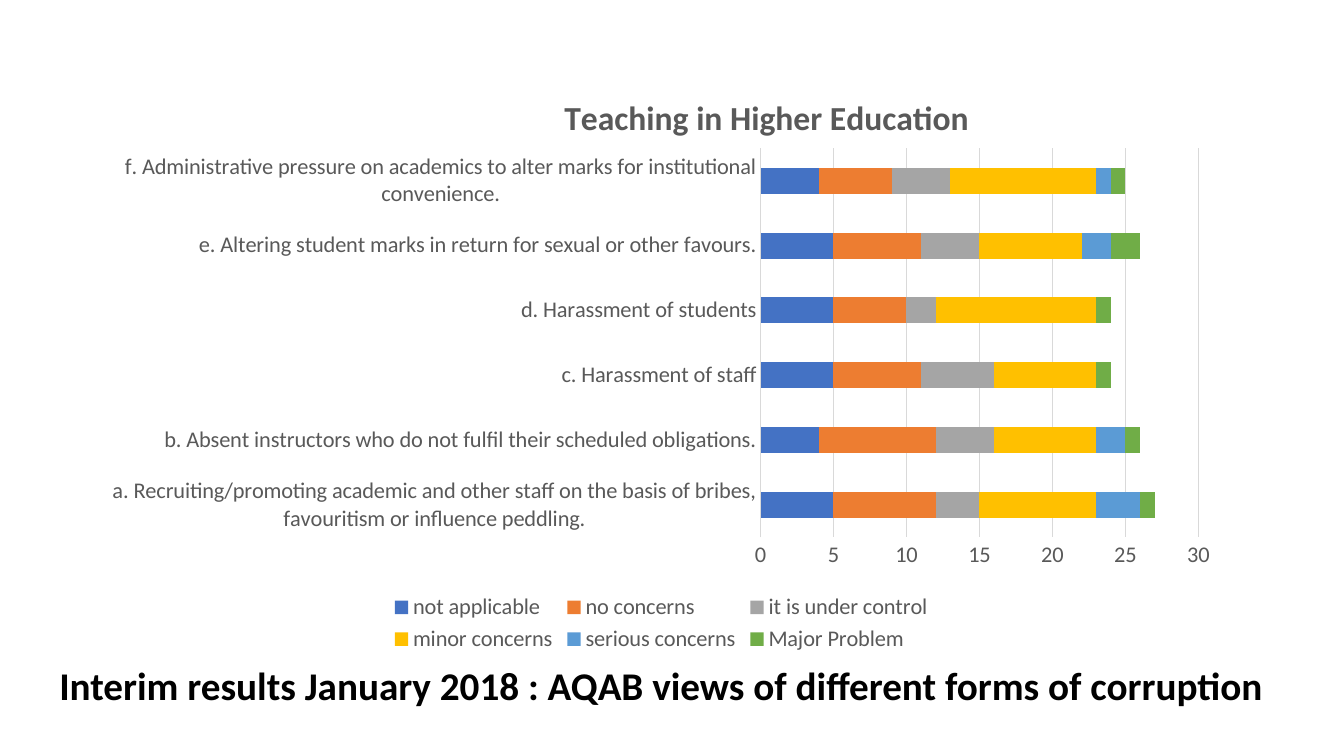
import pptx
import pptx.chart.data
import pptx.enum.chart
import pptx.oxml
import pptx.oxml.ns
import pptx.util
from pptx.dml.color import RGBColor
from pptx.util import Pt

COLORS = {
    "text": "000000", "label": "595959", "grid": "D9D9D9",
    "not applicable": "4472C4", "no concerns": "ED7D31",
    "it is under control": "A5A5A5", "minor concerns": "FFC000",
    "serious concerns": "5B9BD5", "Major Problem": "70AD47",
}
FORMS = [
    "a. Recruiting/promoting academic and other staff on the basis of bribes, favouritism or influence peddling.",
    "b. Absent instructors who do not fulfil their scheduled obligations.",
    "c. Harassment of staff",
    "d. Harassment of students",
    "e. Altering student marks in return for sexual or other favours.",
    "f. Administrative pressure on academics to alter marks for institutional convenience.",
]
VIEWS = {
    "not applicable": [5, 4, 5, 5, 5, 4],
    "no concerns": [7, 8, 6, 5, 6, 5],
    "it is under control": [3, 4, 5, 2, 4, 4],
    "minor concerns": [8, 7, 7, 11, 7, 10],
    "serious concerns": [3, 2, 0, 0, 2, 1],
    "Major Problem": [1, 1, 1, 1, 2, 1],
}


def style(font, size, color, bold=False):
    font.name = "Calibri"
    font.size = Pt(size)
    font.bold = bold
    font.color.rgb = RGBColor.from_string(COLORS[color])


def place(part, before, **sizes):
    """Set a manual layout, in fractions of the chart, ahead of an element."""
    for old in part.findall(pptx.oxml.ns.qn("c:layout")):
        part.remove(old)
    target = '<c:layoutTarget val="inner"/>' if "w" in sizes else ""
    modes = "".join(f'<c:{key}Mode val="edge"/>' for key in "xy")
    values = "".join(f'<c:{key} val="{val}"/>' for key, val in sizes.items())
    layout = pptx.oxml.parse_xml(
        f'<c:layout {pptx.oxml.ns.nsdecls("c")}><c:manualLayout>'
        f"{target}{modes}{values}</c:manualLayout></c:layout>")
    part.find(pptx.oxml.ns.qn(before)).addprevious(layout)


deck = pptx.Presentation()
deck.slide_width, deck.slide_height = Pt(960), Pt(540)
slide = deck.slides.add_slide(deck.slide_layouts[6])

# Caption
box = slide.shapes.add_textbox(Pt(35.3), Pt(468.7), Pt(908.6), Pt(41))
frame = box.text_frame
frame.word_wrap = True
frame.text = "Interim results January 2018 : AQAB views of different forms of corruption"
style(frame.paragraphs[0].runs[0].font, 28, "text", True)

# Chart
data = pptx.chart.data.CategoryChartData()
data.categories = FORMS
for name, counts in VIEWS.items():
    data.add_series(name, counts)
chart = slide.shapes.add_chart(
    pptx.enum.chart.XL_CHART_TYPE.BAR_STACKED,
    Pt(64), Pt(41.8), Pt(816.5), Pt(427.7), data).chart
style(chart.font, 10, "text")

# Title
chart.has_title = True
title = chart.chart_title
title.text_frame.text = "Teaching in Higher Education"
style(title.text_frame.paragraphs[0].runs[0].font, 24, "label", True)
title.include_in_layout = False
place(title._element, "c:overlay", x=0.41, y=0.05)

# Bars
plot = chart.plots[0]
plot.gap_width = 150
plot.overlap = 100
plot.vary_by_categories = False
for series in plot.series:
    series.format.fill.solid()
    series.format.fill.fore_color.rgb = RGBColor.from_string(COLORS[series.name])
place(chart._chartSpace.chart.plotArea, "c:barChart", x=0.587, y=0.15, w=0.383, h=0.65)

# Axes
forms, counts = chart.category_axis, chart.value_axis
for axis in (forms, counts):
    axis.major_tick_mark = pptx.enum.chart.XL_TICK_MARK.NONE
    axis.minor_tick_mark = pptx.enum.chart.XL_TICK_MARK.NONE
    style(axis.tick_labels.font, 16, "label")
counts.minimum_scale, counts.maximum_scale, counts.major_unit = 0, 30, 5
counts.format.line.fill.background()
counts.has_major_gridlines = True
for line in (forms.format.line, counts.major_gridlines.format.line):
    line.width = Pt(0.75)
    line.color.rgb = RGBColor.from_string(COLORS["grid"])

# Legend
chart.has_legend = True
chart.legend.position = pptx.enum.chart.XL_LEGEND_POSITION.BOTTOM
chart.legend.include_in_layout = False
style(chart.legend.font, 16, "label")

deck.save("out.pptx")
